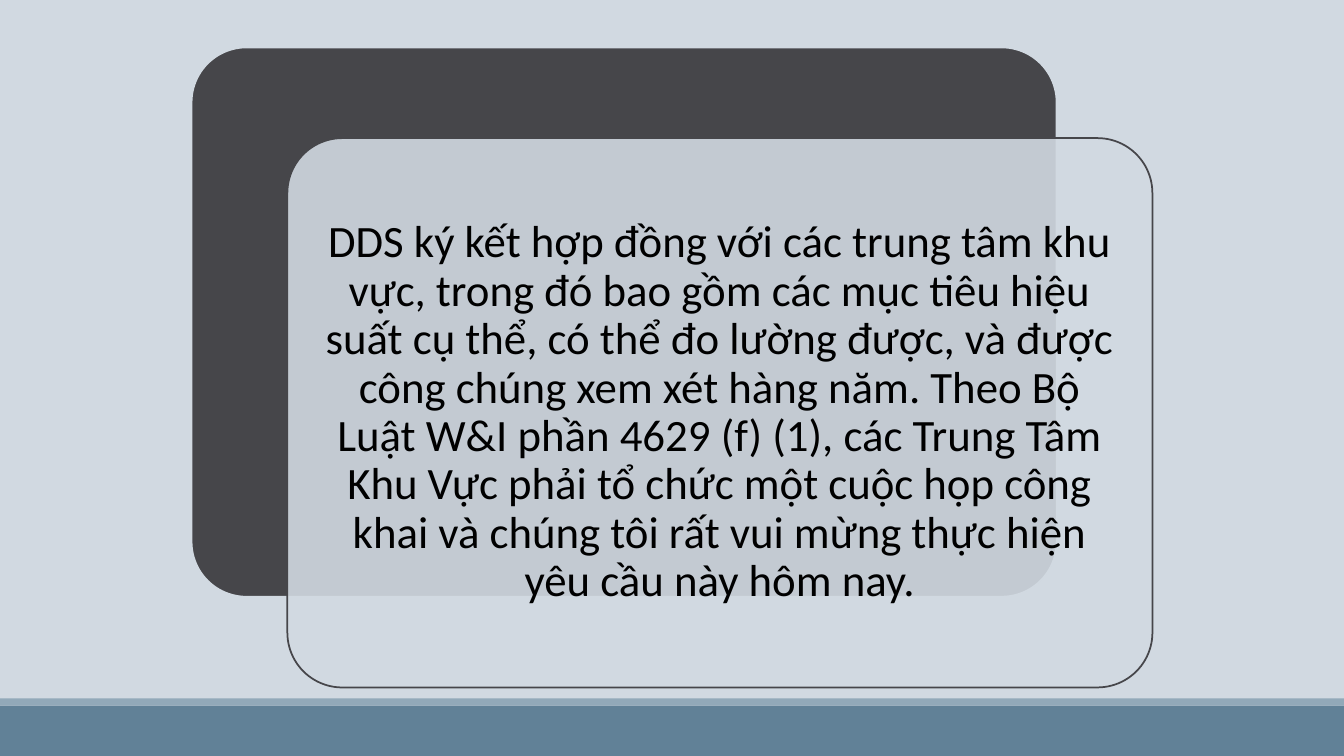
from lxml import etree
from pptx import Presentation
from pptx.dml.color import RGBColor
from pptx.enum.shapes import MSO_SHAPE as SHAPE
from pptx.enum.text import MSO_ANCHOR as ANCHOR, PP_ALIGN as ALIGN
from pptx.oxml.ns import qn
from pptx.util import Emu, Pt

PX = 9144
WIDTH, HEIGHT = 1333, 750
PALE = RGBColor(0xD1, 0xD9, 0xE1)
STEEL = RGBColor(0x61, 0x81, 0x97)
MIST = RGBColor(0x92, 0xA9, 0xB9)
CHARCOAL = RGBColor(0x46, 0x46, 0x4A)
BLACK = RGBColor(0, 0, 0)

MESSAGE = (
    "DDS ký kết hợp đồng với các trung tâm khu vực, trong đó bao gồm các mục tiêu "
    "hiệu suất cụ thể, có thể đo lường được, và được công chúng xem xét hàng năm. "
    "Theo Bộ Luật W&I phần 4629 (f) (1), các Trung Tâm Khu Vực phải tổ chức một "
    "cuộc họp công khai và chúng tôi rất vui mừng thực hiện yêu cầu này hôm nay."
)


def px(n):
    return Emu(n * PX)


def apply(target, values):
    for name, value in values.items():
        setattr(target, name, value)


class Deck:
    font = {"name": "Calibri", "size": Pt(32)}
    paragraph = {"alignment": ALIGN.CENTER, "line_spacing": 0.9, "space_after": Pt(11)}
    frame = {"word_wrap": True, "vertical_anchor": ANCHOR.MIDDLE}
    inset = 13

    def __init__(self):
        self.prs = Presentation()
        apply(self.prs, {"slide_width": px(WIDTH), "slide_height": px(HEIGHT)})
        self.s = self.prs.slides.add_slide(self.prs.slide_layouts[6])

    def background(self, color):
        fill = self.s.background.fill
        fill.solid()
        fill.fore_color.rgb = color

    def box(self, kind, x, y, w, h, color, line=None):
        sp = self.s.shapes.add_shape(kind, px(x), px(y), px(w), px(h))
        sp.shadow.inherit = False
        sp.fill.solid()
        sp.fill.fore_color.rgb = color
        if line is None:
            sp.line.fill.background()
        else:
            sp.line.color.rgb = line
            sp.line.width = Pt(1.25)
        return sp

    def band(self, y, h, color):
        return self.box(SHAPE.RECTANGLE, 0, y, WIDTH, h, color)

    def card(self, x, y, w, h, color, line, opacity=100):
        sp = self.box(SHAPE.ROUNDED_RECTANGLE, x, y, w, h, color, line)
        sp.adjustments[0] = 0.1
        if opacity < 100:
            clr = sp.fill._xPr.find(qn("a:solidFill"))[0]
            etree.SubElement(clr, qn("a:alpha")).set("val", str(opacity * 1000))
        return sp

    def text(self, x, y, w, h, words, color):
        tf = self.s.shapes.add_textbox(px(x), px(y), px(w), px(h)).text_frame
        margins = {f"margin_{side}": px(self.inset) for side in ("left", "top", "right", "bottom")}
        apply(tf, {**self.frame, **margins})
        p = tf.paragraphs[0]
        apply(p, self.paragraph)
        r = p.add_run()
        r.text = words
        apply(r.font, self.font)
        r.font.color.rgb = color


def main():
    deck = Deck()
    deck.background(PALE)
    deck.band(700, 50, STEEL)
    deck.band(693, 7, MIST)

    x, y, w, h = 190, 47, 858, 545
    deck.card(x, y, w, h, CHARCOAL, PALE)
    x, y = x + 95, y + 90
    deck.card(x, y, w, h, PALE, CHARCOAL, opacity=90)
    pad = 16
    deck.text(x + pad, y + pad, w - 2 * pad, h - 2 * pad, MESSAGE, BLACK)

    deck.prs.save("out.pptx")


if __name__ == "__main__":
    main()
